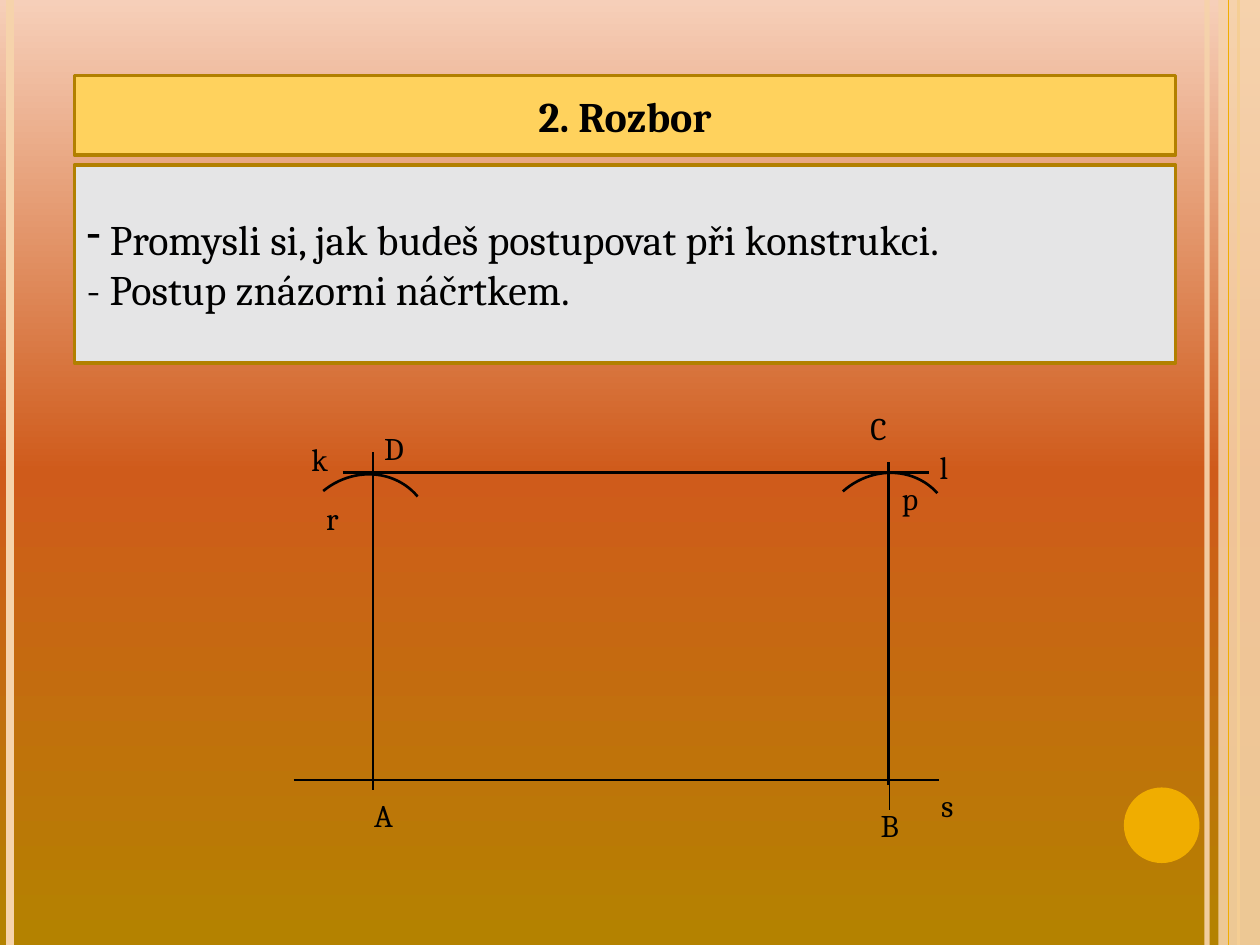
from copy import deepcopy
from dataclasses import dataclass

from lxml.etree import SubElement
from pptx import Presentation
from pptx.dml.color import RGBColor
from pptx.enum.shapes import MSO_CONNECTOR, MSO_SHAPE
from pptx.enum.text import MSO_ANCHOR, MSO_AUTO_SIZE, PP_ALIGN
from pptx.oxml.ns import qn
from pptx.util import Inches, Pt


@dataclass(frozen=True)
class Theme:
    font: str = "Cambria"
    ink: str = "000000"
    gold: str = "F0AD00"
    sand: str = "F6D3AB"
    head: str = "FFD25D"
    panel: str = "E5E5E6"
    edge: str = "B28000"
    sky: tuple = ((0, "F6CFB9"), (0.5, "CF5B1B"), (1, "B48200"))
    large: int = 24
    small: int = 18


THEME = Theme()


def rgb(code):
    return RGBColor.from_string(code)


def fade(shape, alpha):
    """Set the opacity, in percent, of the shape's own colour."""
    color = shape.element.spPr.find(".//" + qn("a:srgbClr"))
    SubElement(color, qn("a:alpha"), val=str(alpha * 1000))


def write(shape, *lines, size=THEME.small, bold=False, align=PP_ALIGN.LEFT,
          anchor=MSO_ANCHOR.TOP, fit=MSO_AUTO_SIZE.NONE):
    frame = shape.text_frame
    frame.word_wrap = True
    frame.auto_size = fit
    frame.vertical_anchor = anchor
    frame.text = "\n".join(lines)
    for para in frame.paragraphs:
        para.alignment = align
        for run in para.runs:
            font = run.font
            font.name, font.size, font.bold = THEME.font, Pt(size), bold
            font.color.rgb = rgb(THEME.ink)
    return frame


def paint(shape, fill, edge=None):
    shape.fill.solid()
    shape.fill.fore_color.rgb = rgb(fill)
    if edge:
        shape.line.color.rgb = rgb(edge)
        shape.line.width = Pt(2)
    else:
        shape.line.fill.background()


def block(slide, kind, box, fill, edge=None):
    shape = slide.shapes.add_shape(kind, *map(Inches, box))
    shape.shadow.inherit = False
    paint(shape, fill, edge)
    return shape


def rule(slide, x1, y1, x2, y2, width=1.5, color=THEME.ink):
    line = slide.shapes.add_connector(
        MSO_CONNECTOR.STRAIGHT, *map(Inches, (x1, y1, x2, y2)))
    line.line.color.rgb = rgb(color)
    line.line.width = Pt(width)
    SubElement(line.element.spPr, qn("a:effectLst"))
    return line


def backdrop(slide):
    fill = slide.background.fill
    fill.gradient()
    fill.gradient_angle = 270
    stops = slide.element.find(".//" + qn("a:gsLst"))
    stops.append(deepcopy(stops[0]))
    for stop, (place, color) in zip(fill.gradient_stops, THEME.sky):
        stop.position = place
        stop.color.rgb = rgb(color)


def border(slide, box):
    left, top, width, height = box
    right, base = left + width, top + height

    def stripe(x, weight, color):
        return rule(slide, x, top, x, base, weight, color)

    fade(stripe(right - 0.42, 3, THEME.sand), 93)
    stripe(left + 0.08, 4.5, THEME.sand)
    stripe(right - 0.17, 1.5, THEME.gold)
    band = (right - 0.33, top, 0.33, height)
    fade(block(slide, MSO_SHAPE.RECTANGLE, band, THEME.sand), 87)
    stripe(right - 0.25, 0.75, THEME.gold)
    dot = (right - 1.08, base - 1.25, 0.6, 0.6)
    block(slide, MSO_SHAPE.OVAL, dot, THEME.gold)


def heading(slide, box):
    title = slide.shapes.title
    title.left, title.top, title.width, title.height = map(Inches, box)
    paint(title, THEME.head, THEME.edge)
    write(title, "2. Rozbor", size=THEME.large, bold=True,
          align=PP_ALIGN.CENTER, anchor=MSO_ANCHOR.MIDDLE)


def advice(slide, box):
    panel = block(slide, MSO_SHAPE.RECTANGLE, box, THEME.panel, THEME.edge)
    frame = write(panel, " Promysli si, jak budeš postupovat při konstrukci.",
                  "- Postup znázorni náčrtkem.",
                  size=THEME.large, anchor=MSO_ANCHOR.MIDDLE)
    props = frame.paragraphs[0]._p.get_or_add_pPr()
    SubElement(props, qn("a:buChar"), char="-")


def sketch(slide, box):
    """Draw the rectangle ABCD with its construction lines and labels."""
    left, top, _, _ = box
    lines = (
        (0, 2.99, 5.12, 2.99, 1.5),
        (4.73, 2.91, 4.73, 3.23, 1),
        (0.63, 0.39, 0.63, 3.07, 1.5),
        (4.72, 0.47, 4.72, 3.03, 1.5),
        (0.39, 0.55, 5.04, 0.55, 1.5),
    )
    for x1, y1, x2, y2, width in lines:
        rule(slide, left + x1, top + y1, left + x2, top + y2, width)

    for x, y, turn in ((0.01, 0.58, 320.5), (4.15, 0.57, 318.2)):
        arc = slide.shapes.add_shape(
            MSO_SHAPE.ARC, *map(Inches, (left + x, top + y, 1.1, 1.02)))
        arc.shadow.inherit = False
        arc.rotation = turn
        arc.fill.background()
        arc.line.color.rgb = rgb(THEME.ink)
        arc.line.width = Pt(1.5)

    labels = (
        ("s", 5.04, 2.99, 0.55), ("k", 0.08, 0.24, 0.16),
        ("r", 0.16, 0.71, 0.39), ("p", 4.73, 0.55, 0.47),
        ("A", 0.54, 3.07, 0.55), ("B", 4.56, 3.15, 0.39),
        ("C", 4.48, 0, 0.47), ("D", 0.62, 0.16, 0.39),
        ("l", 5.03, 0.31, 0.24),
    )
    for name, x, y, width in labels:
        label = slide.shapes.add_textbox(
            *map(Inches, (left + x, top + y, width, 0.4)))
        write(label, name, fit=MSO_AUTO_SIZE.SHAPE_TO_FIT_TEXT)


def main():
    deck = Presentation()
    deck.slide_width, deck.slide_height = Inches(10), Inches(7.5)
    slide = deck.slides.add_slide(deck.slide_layouts[5])
    backdrop(slide)
    border(slide, (0, 0, 10, 7.5))
    heading(slide, (0.59, 0.6, 8.74, 0.63))
    advice(slide, (0.59, 1.31, 8.74, 1.57))
    sketch(slide, (2.33, 3.2, 5.59, 3.55))
    deck.save("out.pptx")


if __name__ == "__main__":
    main()
